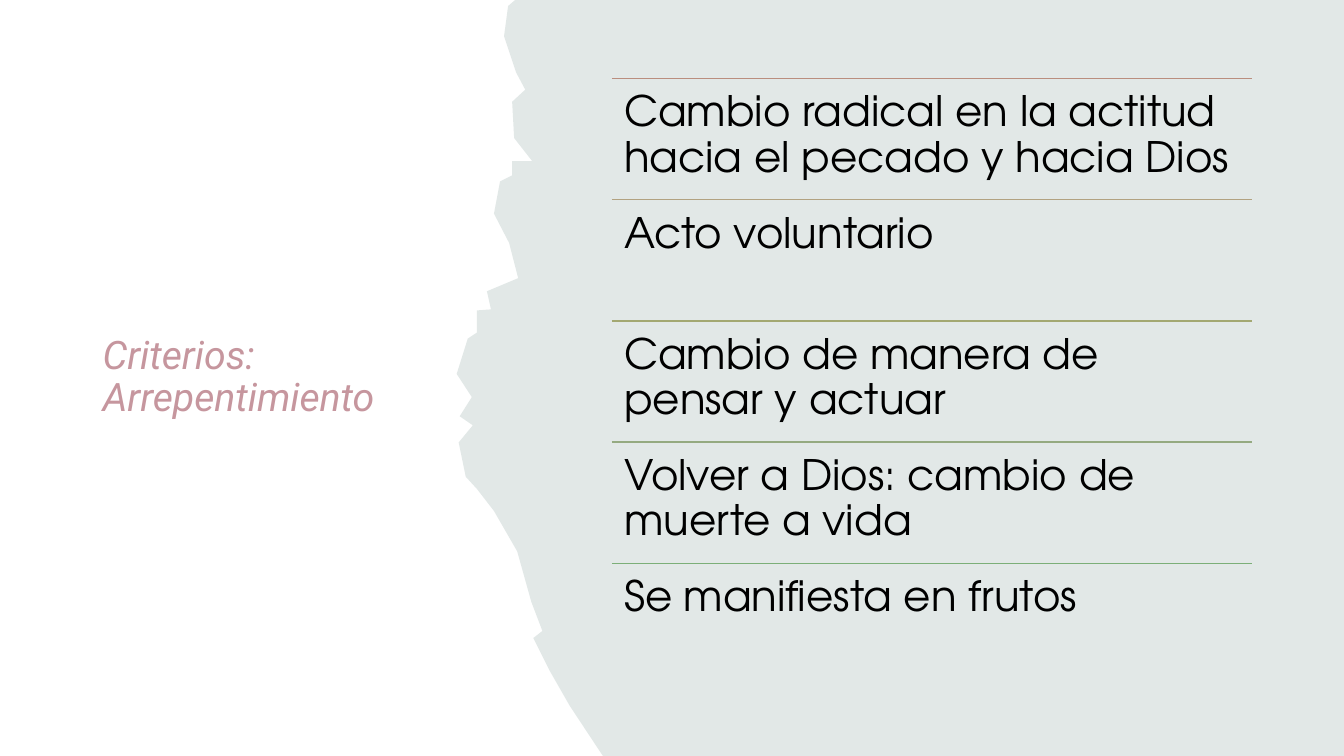
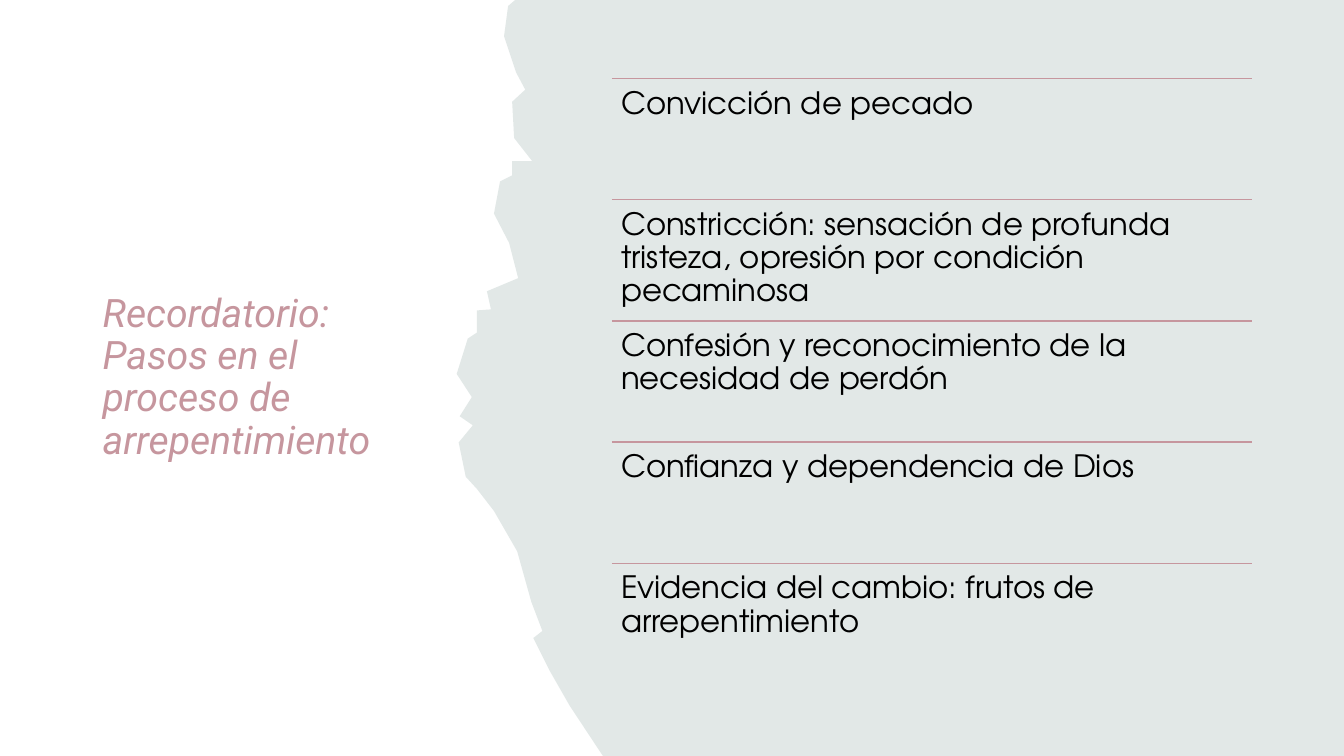
from dataclasses import dataclass

from lxml.etree import SubElement
from pptx import Presentation
from pptx.dml.color import RGBColor
from pptx.enum.shapes import MSO_CONNECTOR
from pptx.enum.text import MSO_ANCHOR
from pptx.oxml.ns import qn
from pptx.slide import Slide
from pptx.util import Inches, Pt

# Shared look
COLORS = {
    "paper": "FFFFFF", "panel": "E2E8E7", "rose": "C6969E", "ink": "000000",
    "clay": "BA8E7F", "sand": "B2A281", "olive": "A3A872", "sage": "95AA81",
    "green": "7CAF78",
}
SLIDE_W, SLIDE_H = 13.33, 7.5
TITLE_BOX = (0.92, 0.78, 3.5, 5.94)
TITLE_FONT = {"name": "Roboto", "size": Pt(28), "italic": True}
LIST_FONT = "TeX Gyre Adventor"
LIST_LEFT, LIST_TOP, LIST_W, LIST_H = 6.07, 0.78, 6.35, 6.01

# Torn left edge of the panel, from bottom to top
TORN_EDGE = [
    (5.98, 7.5), (5.65, 7), (5.45, 6.65), (5.29, 6.33), (5.38, 6.26),
    (5.27, 5.97), (5.13, 5.47), (4.9, 5.07), (4.73, 4.85), (4.62, 4.73),
    (4.55, 4.39), (4.69, 4.22), (4.56, 4.13), (4.68, 3.94), (4.53, 3.71),
    (4.64, 3.36), (4.73, 3.3), (4.73, 3.08), (4.87, 3.07), (4.83, 2.89),
    (5.14, 2.76), (5.05, 2.41), (4.9, 2.12), (4.96, 1.8), (5.08, 1.74),
    (5.08, 1.6), (5.28, 1.6), (5.1, 1.37), (5.08, 1.01), (5.21, 0.89),
    (5.12, 0.72), (5, 0.36), (5.04, 0.06), (5.11, 0),
]


@dataclass(frozen=True)
class Item:
    text: str
    rule: str = "rose"


@dataclass(frozen=True)
class ListSlide:
    title: str
    size: int
    inset: float
    items: tuple[Item, ...]


SLIDES = [
    ListSlide("Criterios: Arrepentimiento", 30, 0.12, (
        Item("Cambio radical en la actitud hacia el pecado y hacia Dios", "clay"),
        Item("Acto voluntario", "sand"),
        Item("Cambio de manera de pensar y actuar", "olive"),
        Item("Volver a Dios: cambio de muerte a vida", "sage"),
        Item("Se manifiesta en frutos", "green"),
    )),
    ListSlide("Recordatorio: Pasos en el proceso de arrepentimiento", 22, 0.09, (
        Item("Convicción de pecado"),
        Item("Constricción: sensación de profunda tristeza, opresión por "
             "condición pecaminosa"),
        Item("Confesión y reconocimiento de la necesidad de perdón"),
        Item("Confianza y dependencia de Dios"),
        Item("Evidencia del cambio: frutos de arrepentimiento"),
    )),
]


def rgb(name: str) -> RGBColor:
    return RGBColor.from_string(COLORS[name])


def set_attrs(obj: object, values: dict) -> None:
    for name, value in values.items():
        setattr(obj, name, value)


def add_panel(s: Slide) -> None:
    corners = [(SLIDE_W, SLIDE_H), *TORN_EDGE]
    builder = s.shapes.build_freeform(Inches(SLIDE_W), 0)
    builder.add_line_segments([(Inches(x), Inches(y)) for x, y in corners], close=True)
    sp = builder.convert_to_shape()
    sp.shadow.inherit = False
    sp.fill.solid()
    sp.fill.fore_color.rgb = rgb("panel")
    sp.line.fill.background()


def add_text(s: Slide, box: tuple[float, ...], text: str, font: dict, color: str,
             frame: dict) -> None:
    tf = s.shapes.add_textbox(*map(Inches, box)).text_frame
    set_attrs(tf, {"word_wrap": True} | frame)
    p = tf.paragraphs[0]
    p.line_spacing = 0.9
    r = p.add_run()
    r.text = text
    set_attrs(r.font, font)
    r.font.color.rgb = rgb(color)


def add_rule(s: Slide, top: float, color: str) -> None:
    ends = (LIST_LEFT, top, LIST_LEFT + LIST_W, top)
    line = s.shapes.add_connector(MSO_CONNECTOR.STRAIGHT, *map(Inches, ends))
    line.line.color.rgb = rgb(color)
    line.line.width = Pt(1)
    SubElement(line._element.spPr, qn("a:effectLst"))


def add_list(s: Slide, content: ListSlide) -> None:
    row_h = LIST_H / len(content.items)
    sides = ("left", "top", "right", "bottom")
    frame = {f"margin_{side}": Inches(content.inset) for side in sides}
    font = {"name": LIST_FONT, "size": Pt(content.size)}
    for i, item in enumerate(content.items):
        top = LIST_TOP + i * row_h
        add_rule(s, top, item.rule)
        add_text(s, (LIST_LEFT, top, LIST_W, row_h), item.text, font, "ink", frame)


def main() -> None:
    prs = Presentation()
    set_attrs(prs, {"slide_width": Inches(SLIDE_W), "slide_height": Inches(SLIDE_H)})
    for content in SLIDES:
        s = prs.slides.add_slide(prs.slide_layouts[6])
        # Background, title, torn panel, list
        s.background.fill.solid()
        s.background.fill.fore_color.rgb = rgb("paper")
        add_text(s, TITLE_BOX, content.title, TITLE_FONT, "rose",
                 {"vertical_anchor": MSO_ANCHOR.MIDDLE})
        add_panel(s)
        add_list(s, content)
    prs.save("out.pptx")


if __name__ == "__main__":
    main()
